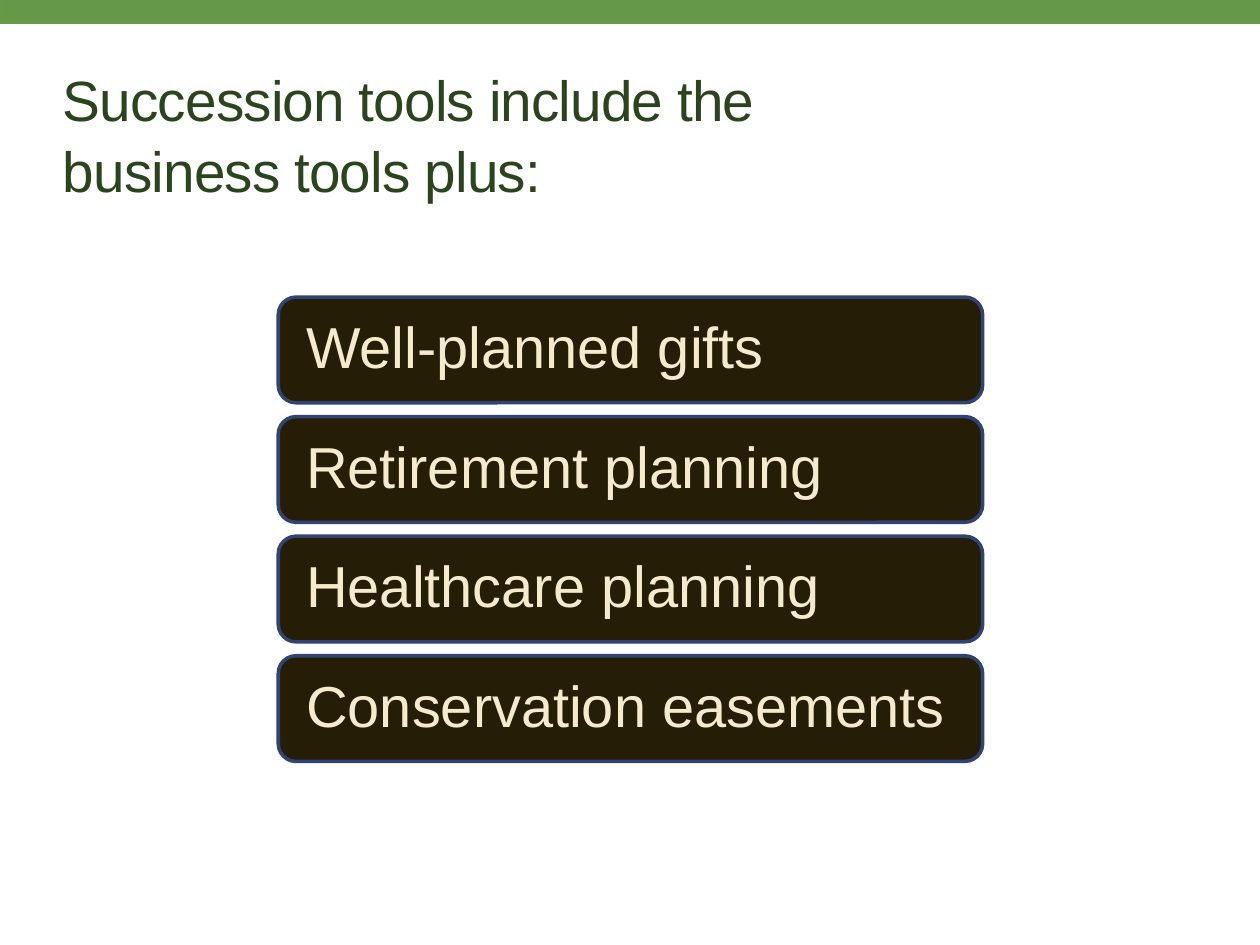
import pptx
import pptx.dml.color
import pptx.enum.shapes
import pptx.enum.text
import pptx.util

Cm = pptx.util.Cm
Pt = pptx.util.Pt
SHAPES = pptx.enum.shapes.MSO_SHAPE

COLORS = {
    "band": "669947",
    "band_line": "679A47",
    "title": "2A451D",
    "tool": "261D07",
    "tool_line": "304373",
    "tool_text": "F5EACC",
}
TOOLS = [
    "Well-planned gifts",
    "Retirement planning",
    "Healthcare planning",
    "Conservation easements",
]
TOOL_TOP, TOOL_PITCH = 5.99, 2.41


def color(name):
    return pptx.dml.color.RGBColor.from_string(COLORS[name])


def add_box(slide, kind, left, top, width, height, fill):
    shape = slide.shapes.add_shape(kind, Cm(left), Cm(top), Cm(width), Cm(height))
    shape.shadow.inherit = False
    shape.fill.solid()
    shape.fill.fore_color.rgb = color(fill)
    shape.line.color.rgb = color(fill + "_line")
    shape.line.width = Pt(2)
    return shape


def write_text(shape, text, size, text_color, inset, line_spacing):
    frame = shape.text_frame
    frame.word_wrap = True
    frame.vertical_anchor = pptx.enum.text.MSO_ANCHOR.MIDDLE
    frame.margin_left = frame.margin_right = Cm(inset)
    frame.margin_top = frame.margin_bottom = Cm(inset)
    paragraph = frame.paragraphs[0]
    paragraph.text = text
    paragraph.alignment = pptx.enum.text.PP_ALIGN.LEFT
    paragraph.line_spacing = line_spacing
    paragraph.font.name = "Arial"
    paragraph.font.size = Pt(size)
    paragraph.font.color.rgb = color(text_color)
    return paragraph


def add_title(slide, text):
    title = slide.shapes.add_textbox(Cm(1.27), Cm(1.37), Cm(16.56), Cm(2.62))
    paragraph = write_text(title, text, 32.4, "title", 0, 1.04)
    # Tighten the letter spacing by half a point
    paragraph.runs[0]._r.get_or_add_rPr().set("spc", "-50")


def add_tool(slide, text, top):
    tool = add_box(slide, SHAPES.ROUNDED_RECTANGLE, 5.61, top, 14.2, 2.13, "tool")
    write_text(tool, text, 33, "tool_text", 0.46, 0.9)


def main():
    presentation = pptx.Presentation()
    presentation.slide_width = Cm(25.4)
    presentation.slide_height = Cm(19.05)
    slide = presentation.slides.add_slide(presentation.slide_layouts[6])

    # Top band and title
    add_box(slide, SHAPES.RECTANGLE, 0, -0.05, 25.43, 0.51, "band")
    add_title(slide, "Succession tools include the business tools plus:")

    # Stack of succession tools
    for index, text in enumerate(TOOLS):
        add_tool(slide, text, TOOL_TOP + index * TOOL_PITCH)

    presentation.save("out.pptx")


if __name__ == "__main__":
    main()
